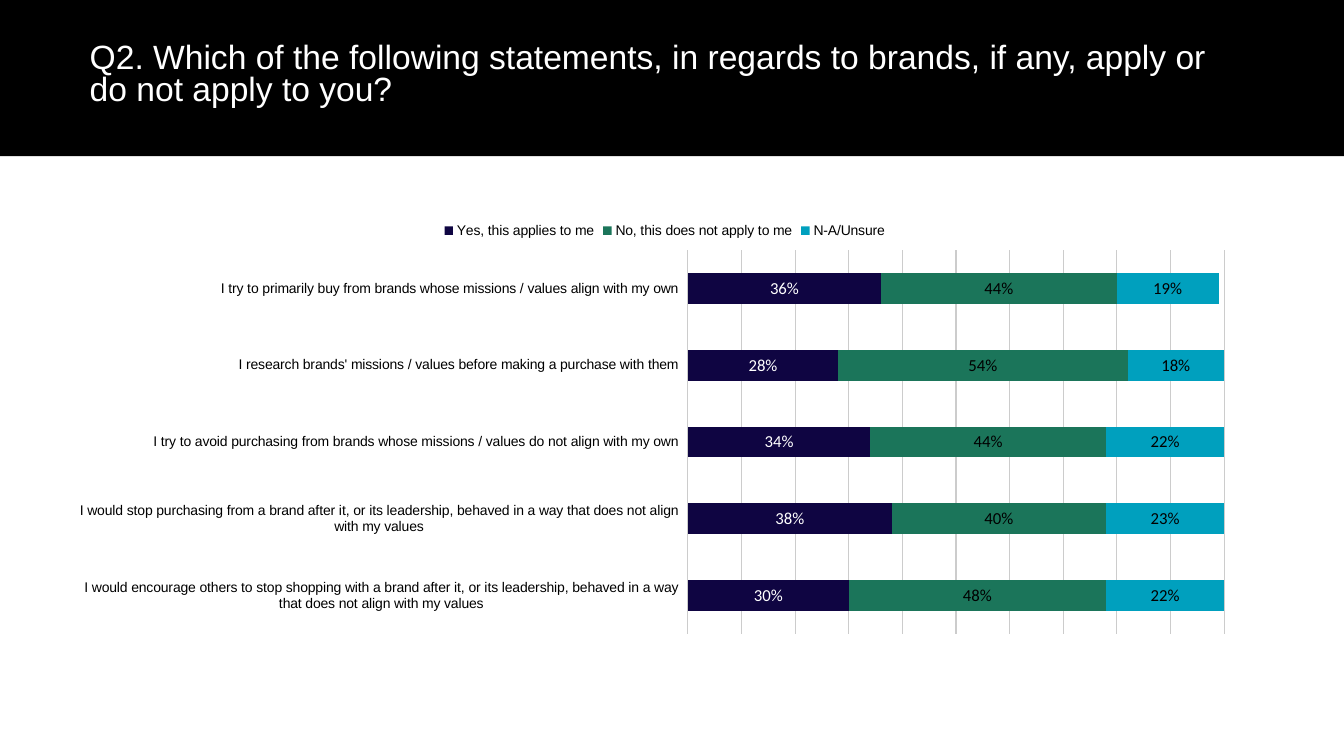
"""Build a survey slide with a title band and a stacked bar chart."""
import pptx
import pptx.chart.data
import pptx.dml.color
import pptx.enum.chart
import pptx.enum.shapes
import pptx.enum.text
import pptx.oxml
import pptx.oxml.ns
import pptx.util

Pt = pptx.util.Pt
RGBColor = pptx.dml.color.RGBColor

BLACK = RGBColor(0x00, 0x00, 0x00)
WHITE = RGBColor(0xFF, 0xFF, 0xFF)
GRID_GREY = RGBColor(0xCC, 0xCC, 0xCC)
NAVY = RGBColor(0x0F, 0x05, 0x42)
GREEN = RGBColor(0x1B, 0x75, 0x5A)
CYAN = RGBColor(0x00, 0xA0, 0xBE)

QUESTION = (
    "Q2. Which of the following statements, in regards to brands, "
    "if any, apply or do not apply to you?"
)
STATEMENTS = [
    "I try to primarily buy from brands whose missions / values align with my own",
    "I research brands' missions / values before making a purchase with them",
    "I try to avoid purchasing from brands whose missions / values do not align with my own",
    "I would stop purchasing from a brand after it, or its leadership, "
    "behaved in a way that does not align with my values",
    "I would encourage others to stop shopping with a brand after it, or its leadership, "
    "behaved in a way that does not align with my values",
]
ANSWERS = [
    ("Yes, this applies to me", [0.36, 0.28, 0.34, 0.38, 0.3], NAVY, WHITE),
    ("No, this does not apply to me", [0.44, 0.54, 0.44, 0.4, 0.48], GREEN, BLACK),
    ("N-A/Unsure", [0.19, 0.18, 0.22, 0.23, 0.22], CYAN, BLACK),
]
PLOT_AREA = {"x": 0.52, "y": 0.09, "w": 0.46, "h": 0.89}


def set_font(font, name, size, color):
    """Set the typeface, size and colour of a font."""
    font.name = name
    font.size = Pt(size)
    font.color.rgb = color


def add_band(slide, width, height):
    """Add the black band across the top."""
    band = slide.shapes.add_shape(
        pptx.enum.shapes.MSO_SHAPE.RECTANGLE, 0, 0, width, height
    )
    band.shadow.inherit = False
    band.fill.solid()
    band.fill.fore_color.rgb = BLACK
    band.line.fill.background()


def add_question(slide, left, top, width, height):
    """Add the survey question in the band."""
    question = slide.shapes.add_textbox(left, top, width, height).text_frame
    question.word_wrap = True
    question.vertical_anchor = pptx.enum.text.MSO_ANCHOR.MIDDLE
    paragraph = question.paragraphs[0]
    paragraph.line_spacing = 0.8
    run = paragraph.add_run()
    run.text = QUESTION
    set_font(run.font, "Arial", 24, WHITE)


def place_plot(chart):
    """Fix the inner plot area as fractions of the chart."""
    namespace = pptx.oxml.ns.nsdecls("c")
    places = "".join(
        f'<c:{side}Mode val="edge"/>' for side in "xy"
    ) + "".join(f'<c:{side} val="{share}"/>' for side, share in PLOT_AREA.items())
    layout = pptx.oxml.parse_xml(
        f'<c:layout {namespace}><c:manualLayout><c:layoutTarget val="inner"/>'
        f"{places}</c:manualLayout></c:layout>"
    )
    plot_area = chart.plots[0]._element.getparent()
    for automatic in plot_area.findall(pptx.oxml.ns.qn("c:layout")):
        plot_area.remove(automatic)
    plot_area.insert(0, layout)


def style_axes(chart):
    """Style the statement axis and the hidden percentage axis."""
    statements = chart.category_axis
    statements.reverse_order = True
    statements.major_tick_mark = pptx.enum.chart.XL_TICK_MARK.NONE
    statements.tick_label_position = pptx.enum.chart.XL_TICK_LABEL_POSITION.LOW
    statements.format.line.fill.background()
    set_font(statements.tick_labels.font, "Arial", 10, BLACK)

    shares = chart.value_axis
    shares.visible = False
    shares.minimum_scale = 0
    shares.maximum_scale = 1
    shares.major_unit = 0.1
    shares.has_major_gridlines = True
    gridline = shares.major_gridlines.format.line
    gridline.color.rgb = GRID_GREY
    gridline.width = Pt(0.75)


def style_answer(answer, fill_color, label_color):
    """Colour one answer and show its percentages."""
    answer.format.fill.solid()
    answer.format.fill.fore_color.rgb = fill_color
    labels = answer.data_labels
    labels.show_value = True
    labels.number_format = "0%"
    labels.number_format_is_linked = False
    set_font(labels.font, "Calibri", 12, label_color)


def add_answer_chart(slide, left, top, width, height):
    """Add the stacked bars of answers per statement."""
    answers = pptx.chart.data.CategoryChartData(number_format="0%")
    answers.categories = STATEMENTS
    for name, shares, _, _ in ANSWERS:
        answers.add_series(name, shares)
    chart = slide.shapes.add_chart(
        pptx.enum.chart.XL_CHART_TYPE.BAR_STACKED, left, top, width, height, answers
    ).chart
    set_font(chart.font, "Calibri", 12, BLACK)
    chart.has_title = False
    chart.has_legend = True
    chart.legend.position = pptx.enum.chart.XL_LEGEND_POSITION.TOP
    chart.legend.include_in_layout = False
    set_font(chart.legend.font, "Arial", 10, BLACK)

    bars = chart.plots[0]
    bars.vary_by_categories = False
    bars.gap_width = 150
    bars.overlap = 100
    for answer, (_, _, fill_color, label_color) in zip(bars.series, ANSWERS):
        style_answer(answer, fill_color, label_color)
    style_axes(chart)
    place_plot(chart)


def main():
    """Build and save the slide."""
    presentation = pptx.Presentation()
    presentation.slide_width = Pt(960)
    presentation.slide_height = Pt(540)
    slide = presentation.slides.add_slide(presentation.slide_layouts[6])
    add_band(slide, Pt(960), Pt(111.6))
    add_answer_chart(slide, Pt(57), Pt(151), Pt(834), Pt(308))
    add_question(slide, Pt(57), Pt(25), Pt(827), Pt(58))
    presentation.save("out.pptx")


if __name__ == "__main__":
    main()
